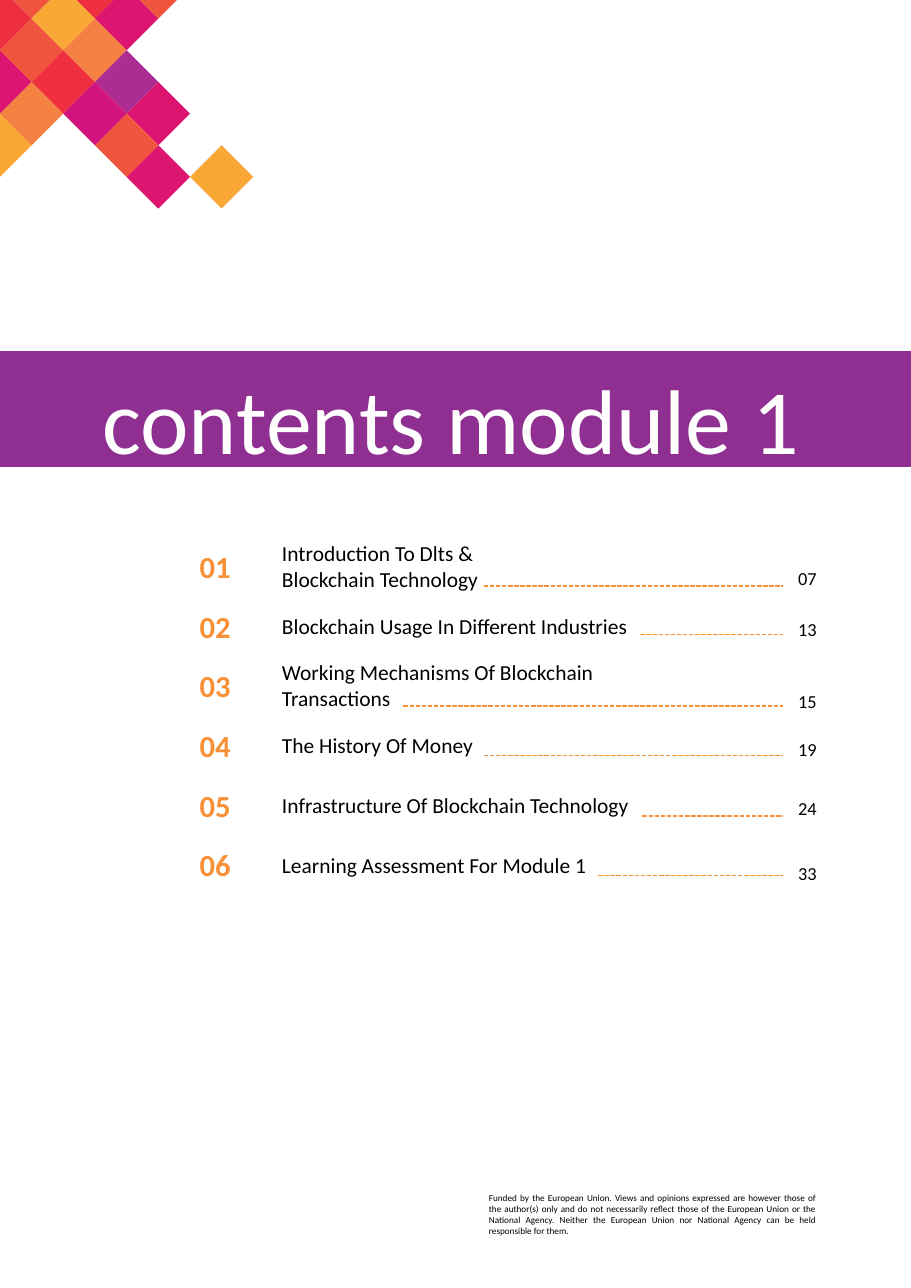
import pptx
import pptx.util
import pptx.dml.color
import pptx.enum.dml
import pptx.enum.shapes
import pptx.enum.text
import lxml.etree
import dataclasses

Cm, Pt = pptx.util.Cm, pptx.util.Pt
Align = pptx.enum.text.PP_ALIGN
Anchor = pptx.enum.text.MSO_ANCHOR
SPACE = "{http://schemas.openxmlformats.org/drawingml/2006/main}"


@dataclasses.dataclass
class Theme:
    font: str = "Calibri"
    ink: str = "000000"
    paper: str = "FFFFFF"
    band: str = "8E2F91"
    accent: str = "F79037"
    red: str = "ED2F40"
    pink: str = "DD1470"
    rose: str = "D3137D"
    plum: str = "AC2C90"
    coral: str = "EF543F"
    peach: str = "F48043"
    gold: str = "F9A835"
    head: int = 60
    number: int = 20
    topic: int = 14
    page: int = 12
    note: int = 6
    lead: float = 1.22


class Page:
    """Holds the theme and the current slide and draws each kind of element."""

    def __init__(self, theme, slide):
        self.theme = theme
        self.slide = slide

    def paint(self, shape, color):
        shape.shadow.inherit = False
        shape.fill.solid()
        shape.fill.fore_color.rgb = pptx.dml.color.RGBColor.from_string(color)
        shape.line.fill.background()

    def band(self, left, top, width, height, color):
        kind = pptx.enum.shapes.MSO_SHAPE.RECTANGLE
        self.paint(self.slide.shapes.add_shape(kind, Cm(left), Cm(top), Cm(width), Cm(height)), color)

    def tile(self, x, y, r, color):
        top = max(0, y - r)
        mid = max(top, y)
        cap, half = r - abs(y - top), r - abs(y - mid)
        spots = [(x - cap, top), (x + cap, top), (x + half, mid), (x, y + r), (x - half, mid)]
        spots = [(Cm(max(0, a)), Cm(b)) for a, b in spots]
        outline = self.slide.shapes.build_freeform(*spots[0])
        outline.add_line_segments(spots[1:], close=True)
        self.paint(outline.convert_to_shape(), color)

    def leader(self, left, right, y):
        kind = pptx.enum.shapes.MSO_CONNECTOR.STRAIGHT
        line = self.slide.shapes.add_connector(kind, Cm(left), Cm(y), Cm(right), Cm(y))
        line.line.color.rgb = pptx.dml.color.RGBColor.from_string(self.theme.accent)
        line.line.width = Pt(1)
        line.line.dash_style = pptx.enum.dml.MSO_LINE.SQUARE_DOT
        lxml.etree.SubElement(line._element.spPr, SPACE + "effectLst")

    def place(self, shape, left, top, width, height):
        shape.left, shape.top, shape.width, shape.height = Cm(left), Cm(top), Cm(width), Cm(height)
        shape._element.getparent().append(shape._element)

    def letter(self, shape, text, size, color, align=Align.LEFT, anchor=Anchor.TOP, bold=False):
        frame = shape.text_frame
        frame.text = text
        frame.word_wrap = True
        frame.auto_size = pptx.enum.text.MSO_AUTO_SIZE.NONE
        frame.vertical_anchor = anchor
        for line in frame.paragraphs:
            line.alignment = align
            line.space_before = Pt(0)
            for run in line.runs:
                run.font.name = self.theme.font
                run.font.size = Pt(size)
                run.font.bold = bold
                run.font.color.rgb = pptx.dml.color.RGBColor.from_string(color)

    def label(self, text, left, top, width, height, size, align, anchor=Anchor.TOP):
        box = self.slide.shapes.add_textbox(Cm(left), Cm(top), Cm(width), Cm(height))
        self.letter(box, text, size, self.theme.ink, align, anchor)

    def title(self, text, left, top, width, height):
        shape = self.slide.shapes.title
        self.place(shape, left, top, width, height)
        self.letter(shape, text, self.theme.head, self.theme.paper)

    def column(self, slot, texts, rows, left, width, mid, pitch, size, color, **style):
        shape = self.slide.placeholders[slot]
        step = Pt(size * self.theme.lead).cm
        self.place(shape, left, mid - rows[0] * step / 2, width, pitch * len(texts))
        self.letter(shape, "\n".join(texts), size, color, **style)
        frame = shape.text_frame
        frame.margin_left = frame.margin_right = frame.margin_top = frame.margin_bottom = 0
        for spot, line in enumerate(frame.paragraphs):
            if spot:
                line.space_before = Cm(pitch - step * (rows[spot - 1] + rows[spot]) / 2)
            props = line._p.get_or_add_pPr()
            props.set("marL", "0")
            props.set("indent", "0")
            lxml.etree.SubElement(props, SPACE + "buNone")


def main():
    theme = Theme()
    deck = pptx.Presentation()
    deck.slide_width, deck.slide_height = Cm(21), Cm(29.7)
    page = Page(theme, deck.slides.add_slide(deck.slide_layouts[3]))

    page.band(0, 8.1, 21, 2.67, theme.band)
    page.label(
        "Funded by the European Union. Views and opinions expressed are however those of the "
        "author(s) only and do not necessarily reflect those of the European Union or the National "
        "Agency. Neither the European Union nor National Agency can be held responsible for them.",
        11.02, 27.36, 8.03, 1.27, theme.note, Align.JUSTIFY)

    tiles = {
        theme.red: [(3, -1), (2, 2), (0, 0)],
        theme.pink: [(4, 0), (0, 2), (5, 5), (5, 3)],
        theme.coral: [(5, -1), (1, 1), (4, 4), (1, -1)],
        theme.gold: [(2, 0), (0, 4), (7, 5)],
        theme.peach: [(3, 1), (1, 3)],
        theme.plum: [(4, 2)],
        theme.rose: [(3, 3)],
    }
    half = 0.73
    for color, spots in tiles.items():
        for col, row in spots:
            page.tile(col * half, 0.43 + row * half, half, color)

    topics = [
        ("Introduction To Dlts &\vBlockchain Technology", 2, "07", 13.34, 11.15, 13.51),
        ("Blockchain Usage In Different Industries", 1, "13", 14.5, 14.76, 14.63),
        ("Working Mechanisms Of Blockchain Transactions", 2, "15", 16.18, 9.3, 16.28),
        ("The History Of Money", 1, "19", 17.27, 11.15, 17.42),
        ("Infrastructure Of Blockchain Technology", 1, "24", 18.64, 14.81, 18.82),
        ("Learning Assessment For Module 1", 1, "33", 20.14, 13.79, 20.19),
    ]
    names, rows = [item[0] for item in topics], [item[1] for item in topics]
    marks = [f"{spot:02}" for spot in range(1, len(topics) + 1)]
    mid, pitch = 13.06, 1.39
    page.column(1, marks, [1] * len(marks), 4.06, 1.8, mid, pitch, theme.number, theme.accent,
                align=Align.CENTER, bold=True)
    page.column(2, names, rows, 6.5, 9.35, mid, pitch, theme.topic, theme.ink)
    for name, count, number, level, start, y in topics:
        page.label(number, 17.81, level - 0.48, 1.27, 0.96, theme.page, Align.RIGHT, Anchor.MIDDLE)
        page.leader(start, 18.05, y)

    page.title("contents module 1", 2.11, 8.23, 17.78, 2.69)
    deck.save("out.pptx")


if __name__ == "__main__":
    main()
